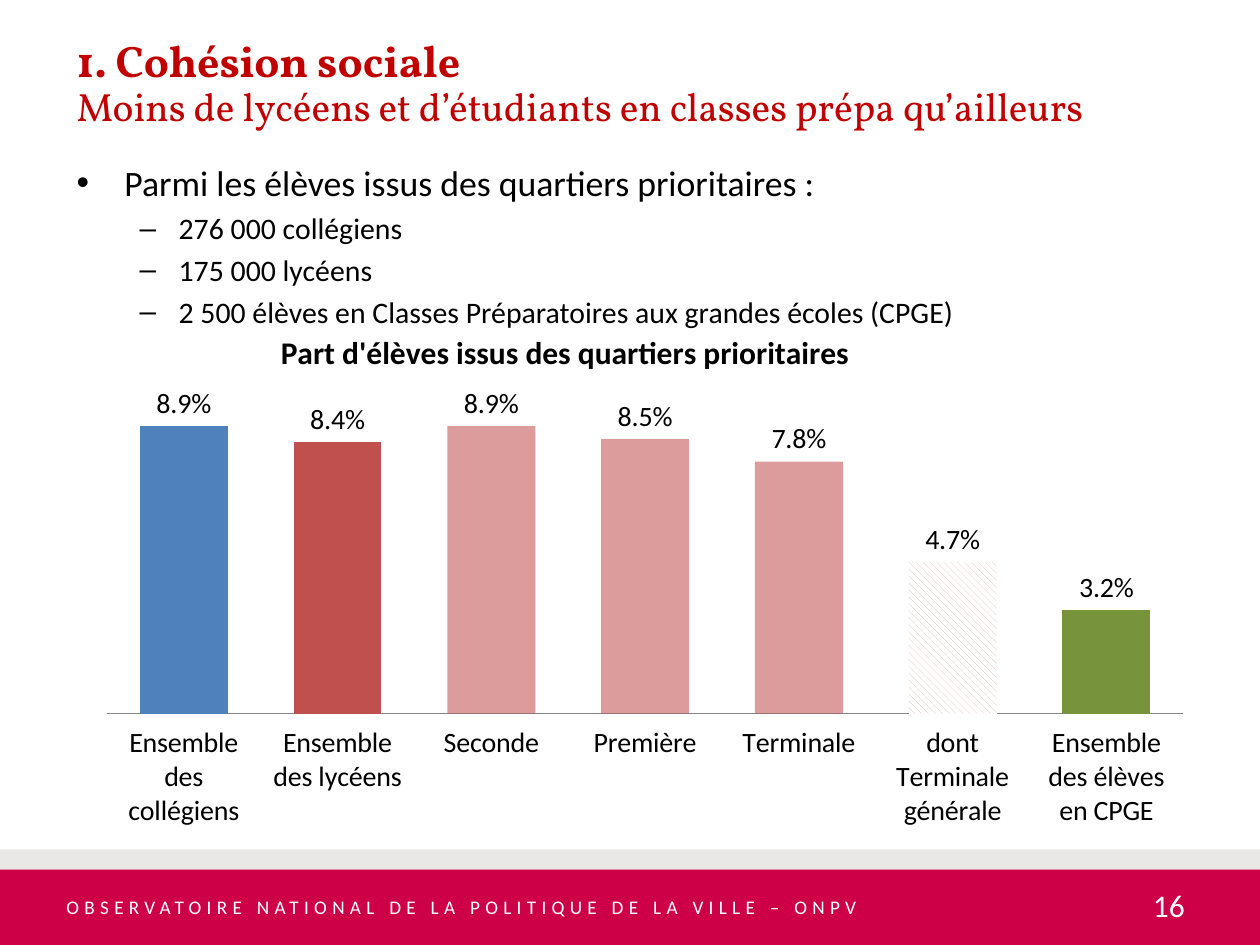
from dataclasses import dataclass
from lxml.etree import SubElement as Sub
from pptx import Presentation
from pptx.chart.data import CategoryChartData as Data
from pptx.dml.color import RGBColor as Rgb
from pptx.enum.chart import XL_CHART_TYPE as Kind, XL_LABEL_POSITION as Spot
from pptx.enum.chart import XL_TICK_LABEL_POSITION as Tick, XL_TICK_MARK as Mark
from pptx.enum.dml import MSO_PATTERN as Pat
from pptx.enum.shapes import MSO_SHAPE as Shape
from pptx.enum.text import MSO_ANCHOR as Anchor, PP_ALIGN as Align
from pptx.oxml.ns import qn
from pptx.util import Inches, Pt


@dataclass(frozen=True)
class Theme:
    head: str = "Vollkorn"
    body: str = "Calibri"
    ink: str = "000000"
    white: str = "FFFFFF"
    title: str = "C00000"
    band: str = "CD0047"
    strip: str = "E9E8E7"
    axis: str = "868686"
    blue: str = "4F81BD"
    red: str = "C0504D"
    pink: str = "E6B9B8"
    green: str = "77933C"
    big: float = 25.2
    sub: float = 22.5
    lead: float = 20.4
    item: float = 17
    name: float = 18
    label: float = 16
    foot: float = 11


T = Theme()


def rgb(code):
    return Rgb.from_string(code)


def style(font, face, size, color, bold=False):
    font.name, font.size, font.bold = face, Pt(size), bold
    font.color.rgb = rgb(color)


def part(box, x, y, w, h):
    left, top, wide, high = box
    return left + x * wide, top + y * high, w * wide, h * high


def place(box):
    return [Inches(v) for v in box]


def write(slide, box, text, anchor=Anchor.TOP):
    frame = slide.shapes.add_textbox(*place(box)).text_frame
    frame.word_wrap = True
    frame.vertical_anchor = anchor
    frame.text = text
    return frame


def heading(slide, box):
    text = "1. Cohésion sociale\vMoins de lycéens et d’étudiants en classes prépa qu’ailleurs"
    para = write(slide, box, text, Anchor.MIDDLE).paragraphs[0]
    para.line_spacing = 0.9
    top, low = para.runs
    style(top.font, T.head, T.big, T.title, True)
    style(low.font, T.head, T.sub, T.title)


def bullets(slide, box):
    rows = [
        ("Parmi les élèves issus des quartiers prioritaires :", 0),
        ("276 000 collégiens", 1),
        ("175 000 lycéens", 1),
        ("2 500 élèves en Classes Préparatoires aux grandes écoles (CPGE)", 1),
    ]
    forms = [("•", T.lead, 0.38, 0.38), ("–", T.item, 0.81, 0.31)]
    frame = write(slide, box, "\n".join(text for text, level in rows))
    for para, (text, level) in zip(frame.paragraphs, rows):
        mark, size, left, hang = forms[level]
        para.level = level
        para.space_before = Pt(size * 0.2)
        style(para.runs[0].font, T.body, size, T.ink)
        props = para._p.get_or_add_pPr()
        props.set("marL", str(Inches(left)))
        props.set("indent", str(-Inches(hang)))
        Sub(props, qn("a:buFont"), typeface="Arial")
        Sub(props, qn("a:buChar"), char=mark)


def layout(node, **parts):
    old = node.find(qn("c:layout"))
    if old is None:
        old = Sub(node, qn("c:layout"))
        node.remove(old)
        tx = node.find(qn("c:tx"))
        node.insert(0 if tx is None else node.index(tx) + 1, old)
    for kid in list(old):
        old.remove(kid)
    man = Sub(old, qn("c:manualLayout"))
    for key, val in parts.items():
        Sub(man, qn("c:" + key), val=str(val))


def paint(bars):
    fills = [T.blue, T.red, T.red, T.red, T.red, None, T.green]
    for i, color in enumerate(fills):
        fill = bars.points[i].format.fill
        if color:
            fill.solid()
            fill.fore_color.rgb = rgb(color)
        else:
            fill.patterned()
            fill.pattern = Pat.WIDE_DOWNWARD_DIAGONAL
            fill.fore_color.rgb = rgb(T.pink)
            fill.back_color.rgb = rgb(T.white)
        if i in (2, 3, 4):
            node = bars.points[i].format.fill._xPr.find(".//" + qn("a:srgbClr"))
            Sub(node, qn("a:alpha"), val="56000")


def graph(slide, box):
    data = Data(number_format="0.0%")
    data.categories = [
        "Ensemble des collégiens", "Ensemble des lycéens", "Seconde", "Première",
        "Terminale", "dont Terminale générale", "Ensemble des élèves en CPGE",
    ]
    data.add_series("Series 1", [0.089, 0.084, 0.089, 0.085, 0.078, 0.047, 0.032])
    chart = slide.shapes.add_chart(Kind.COLUMN_CLUSTERED, *place(box), data).chart
    style(chart.font, T.body, T.label, T.ink)
    chart.has_legend = False
    title = chart.chart_title
    title.text_frame.text = "Part d'élèves issus des quartiers prioritaires"
    style(title.text_frame.paragraphs[0].runs[0].font, T.body, T.name, T.ink, True)
    title.include_in_layout = False
    layout(title._element, xMode="edge", yMode="edge", x=0.17, y=0.04)

    val = chart.value_axis
    val.minimum_scale, val.maximum_scale = 0, 0.1
    val.has_major_gridlines = False
    val.visible = False
    cat = chart.category_axis
    cat.major_tick_mark = cat.minor_tick_mark = Mark.NONE
    cat.tick_label_position = Tick.LOW
    cat.format.line.color.rgb = rgb(T.axis)
    style(cat.tick_labels.font, T.body, T.label, T.ink)

    plot = chart.plots[0]
    plot.gap_width, plot.overlap = 75, -25
    plot.vary_by_categories = False
    bars = plot.series[0]
    bars.invert_if_negative = False
    bars.format.fill.solid()
    bars.format.fill.fore_color.rgb = rgb(T.red)
    paint(bars)
    tags = bars.data_labels
    tags.show_value = True
    tags.number_format, tags.number_format_is_linked = "0.0%", False
    tags.position = Spot.OUTSIDE_END
    style(tags.font, T.body, T.label, T.ink)
    area = chart._chartSpace.find(".//" + qn("c:plotArea"))
    layout(area, layoutTarget="inner", xMode="edge", yMode="edge",
           x=0.02, y=0.165, w=0.96, h=0.612)


def footer(slide, box):
    for y, h, color in ((0.21, 0.79, T.band), (0, 0.21, T.strip)):
        bar = slide.shapes.add_shape(Shape.RECTANGLE, *place(part(box, 0, y, 1, h)))
        bar.shadow.inherit = False
        bar.fill.solid()
        bar.fill.fore_color.rgb = rgb(color)
        bar.line.fill.background()
    text = "OBSERVATOIRE NATIONAL DE LA POLITIQUE DE LA VILLE – ONPV"
    run = write(slide, part(box, 0.054, 0.42, 0.782, 0.33), text).paragraphs[0].runs[0]
    style(run.font, T.body, T.foot, T.white)
    run.font._element.set("spc", "300")
    para = write(slide, part(box, 0.884, 0.32, 0.063, 0.53), "16").paragraphs[0]
    para.alignment = Align.RIGHT
    style(para.runs[0].font, T.body, T.name, T.white)


def main():
    deck = Presentation()
    deck.slide_width, deck.slide_height = Inches(10), Inches(7.5)
    slide = deck.slides.add_slide(deck.slide_layouts[6])
    footer(slide, (-0.12, 6.74, 10.16, 0.76))
    heading(slide, (0.51, 0.21, 9, 0.93))
    graph(slide, (0.67, 2.41, 8.9, 4.19))
    bullets(slide, (0.51, 1.23, 9, 1.29))
    deck.save("out.pptx")


if __name__ == "__main__":
    main()
